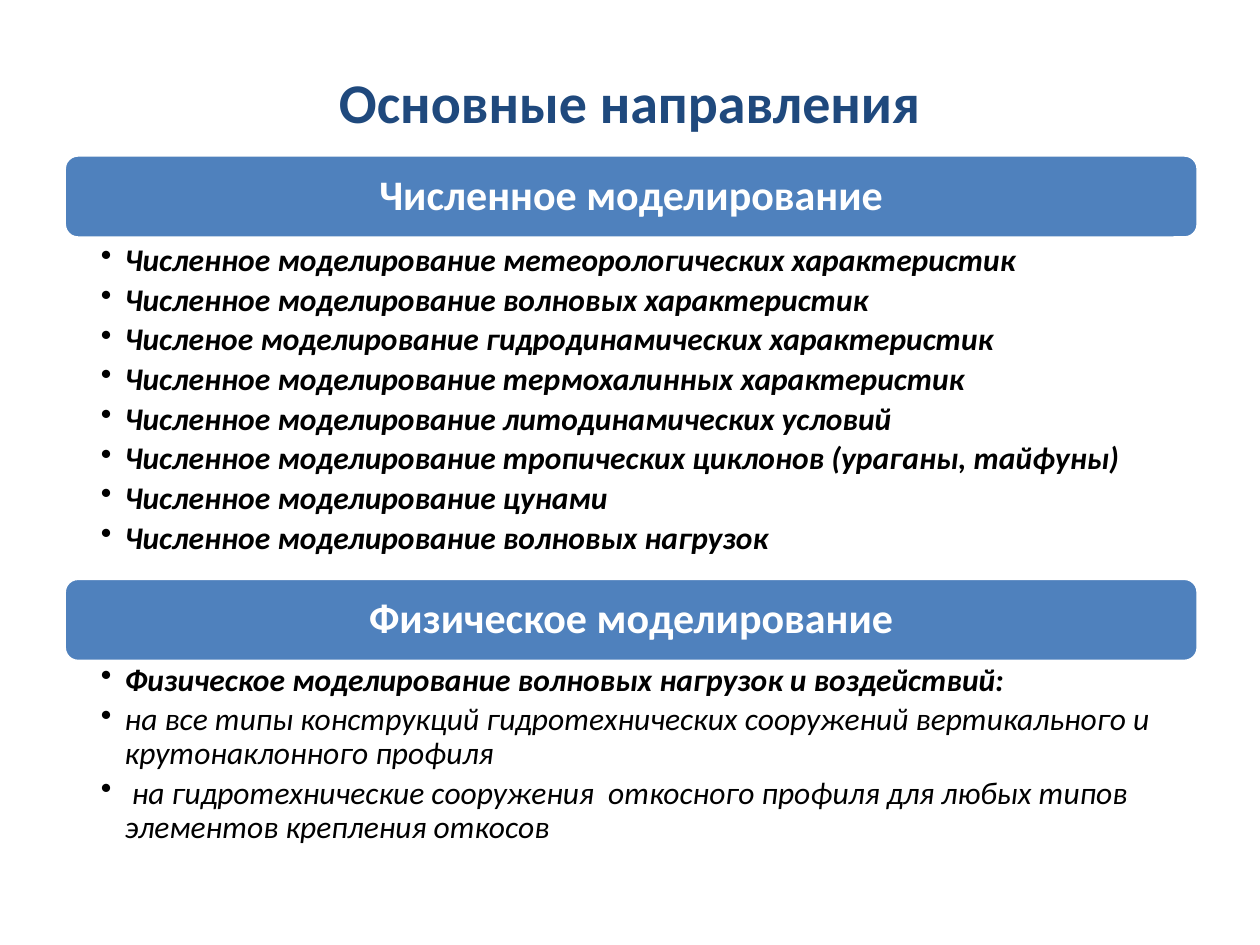
from dataclasses import dataclass

import lxml.etree
import pptx
import pptx.dml.color
import pptx.enum.shapes
import pptx.enum.text
import pptx.oxml.ns
import pptx.util

Inches = pptx.util.Inches
Pt = pptx.util.Pt
RGB = pptx.dml.color.RGBColor
ALIGN = pptx.enum.text.PP_ALIGN
ANCHOR = pptx.enum.text.MSO_ANCHOR


@dataclass(frozen=True)
class Theme:
    font: str = "Calibri"
    navy: str = "1F497D"
    blue: str = "4F81BD"
    white: str = "FFFFFF"
    black: str = "000000"
    title_size: int = 32
    band_size: int = 24
    item_size: int = 18


class Deck:
    def __init__(self, theme, s):
        self.theme = theme
        self.s = s

    def run(self, p, text, size, color, bold=True, italic=False):
        r = p.add_run()
        r.text = text
        r.font.name = self.theme.font
        r.font.size = Pt(size)
        r.font.bold = bold
        r.font.italic = italic
        r.font.color.rgb = RGB.from_string(color)

    def frame(self, sp, left, top, right, bottom, anchor):
        """Set wrapping, insets in inches and vertical anchor."""
        tf = sp.text_frame
        tf.word_wrap = True
        tf.margin_left, tf.margin_top = Inches(left), Inches(top)
        tf.margin_right, tf.margin_bottom = Inches(right), Inches(bottom)
        tf.vertical_anchor = anchor
        return tf

    def title(self, text, x, y, w, h):
        sp = self.s.shapes.add_textbox(Inches(x), Inches(y), Inches(w), Inches(h))
        p = self.frame(sp, 0.1, 0.05, 0.1, 0.05, ANCHOR.MIDDLE).paragraphs[0]
        p.alignment = ALIGN.CENTER
        self.run(p, text, self.theme.title_size, self.theme.navy)

    def band(self, text, x, y, w, h):
        sp = self.s.shapes.add_shape(
            pptx.enum.shapes.MSO_SHAPE.ROUNDED_RECTANGLE,
            Inches(x), Inches(y), Inches(w), Inches(h))
        sp.shadow.inherit = False
        sp.fill.solid()
        sp.fill.fore_color.rgb = RGB.from_string(self.theme.blue)
        sp.line.color.rgb = RGB.from_string(self.theme.white)
        sp.line.width = Pt(2)
        p = self.frame(sp, 0.1, 0.1, 0.1, 0.1, ANCHOR.MIDDLE).paragraphs[0]
        p.alignment = ALIGN.CENTER
        p.line_spacing = 0.9
        self.run(p, text, self.theme.band_size, self.theme.white)

    def bullets(self, items, x, y, w, h):
        """Add an italic bulleted list of (text, bold) items."""
        sp = self.s.shapes.add_textbox(Inches(x), Inches(y), Inches(w), Inches(h))
        tf = self.frame(sp, 0.29, 0.03, 0.14, 0.03, ANCHOR.TOP)
        indent = Inches(0.19)
        for i, (text, bold) in enumerate(items):
            p = tf.add_paragraph() if i else tf.paragraphs[0]
            p.line_spacing = 0.9
            p.space_after = Pt(3.2)
            pPr = p._p.get_or_add_pPr()
            pPr.set("marL", str(indent))
            pPr.set("indent", str(-indent))
            bullet = lxml.etree.SubElement(pPr, pptx.oxml.ns.qn("a:buChar"))
            bullet.set("char", "•")
            self.run(p, text, self.theme.item_size, self.theme.black, bold, True)


NUMERICAL = [
    ("Численное моделирование метеорологических характеристик", True),
    ("Численное моделирование волновых характеристик", True),
    ("Численое моделирование гидродинамических характеристик", True),
    ("Численное моделирование термохалинных характеристик", True),
    ("Численное моделирование литодинамических условий", True),
    ("Численное моделирование тропических циклонов (ураганы, тайфуны)", True),
    ("Численное моделирование цунами", True),
    ("Численное моделирование волновых нагрузок", True),
]
PHYSICAL = [
    ("Физическое моделирование волновых нагрузок и воздействий:", True),
    ("на все типы конструкций гидротехнических сооружений вертикального "
     "и крутонаклонного профиля", False),
    (" на гидротехнические сооружения  откосного профиля для любых типов "
     "элементов крепления откосов", False),
]
# heading, band top, items, list top, list height
SECTIONS = [
    ("Численное моделирование", 1.23, NUMERICAL, 1.91, 2.68),
    ("Физическое моделирование", 4.59, PHYSICAL, 5.24, 1.56),
]


def main():
    prs = pptx.Presentation()
    prs.slide_width, prs.slide_height = Inches(10), Inches(7.5)
    deck = Deck(Theme(), prs.slides.add_slide(prs.slide_layouts[6]))
    deck.title("Основные направления", 0.5, 0.3, 9, 1.01)
    left, width = 0.51, 9
    for heading, band_top, items, list_top, list_height in SECTIONS:
        deck.band(heading, left, band_top, width, 0.66)
        deck.bullets(items, left, list_top, width, list_height)
    prs.save("out.pptx")


if __name__ == "__main__":
    main()
